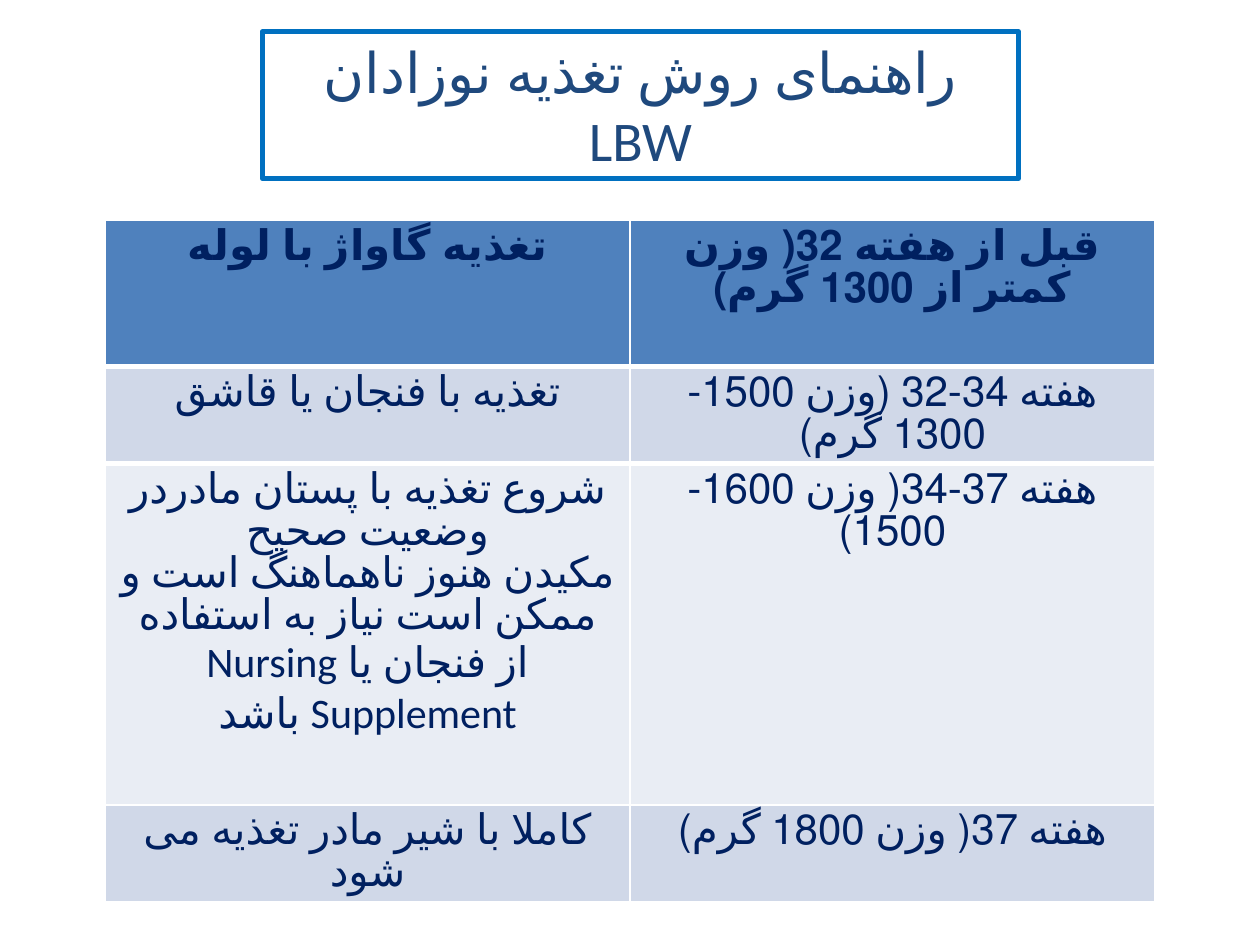
from dataclasses import dataclass

from lxml import etree
from pptx import Presentation
from pptx.dml.color import RGBColor
from pptx.enum import lang, text
from pptx.oxml import ns
from pptx.util import Cm, Pt


@dataclass(frozen=True)
class Theme:
    font: str = "Calibri"
    title_size: Pt = Pt(32)
    cell_size: Pt = Pt(24)
    title_color: str = "1F497D"
    cell_color: str = "002060"
    title_fill: str = "FFFFFF"
    title_border: str = "0070C0"
    header_fill: str = "4F81BD"
    header_rule: str = "FFFFFF"
    band_fills: tuple[str, str] = ("D0D8E8", "E9EDF4")


@dataclass(frozen=True)
class Line:
    wording: str
    rtl: bool = False


@dataclass(frozen=True)
class FeedingStage:
    height: Cm
    method: tuple[Line, ...]
    age: tuple[Line, ...]


THEME = Theme()
TITLE = Line("راهنمای روش تغذیه نوزادان LBW", rtl=True)
STAGES = (
    FeedingStage(
        Cm(2.94),
        (Line("تغذیه گاواژ با لوله"),),
        (Line("قبل از هفته 32( وزن کمتر از 1300 گرم)"),),
    ),
    FeedingStage(
        Cm(1.65),
        (Line("تغذیه با فنجان یا قاشق"),),
        (Line("هفته 34-32 (وزن 1500-1300 گرم)"),),
    ),
    FeedingStage(
        Cm(6.89),
        (
            Line("شروع تغذیه با پستان مادردر وضعیت صحیح"),
            Line(
                "مکیدن هنوز ناهماهنگ است و ممکن است نیاز به استفاده "
                "از فنجان یا Nursing Supplement باشد",
                rtl=True,
            ),
        ),
        (Line("هفته 37-34( وزن 1600-1500)"),),
    ),
    FeedingStage(
        Cm(1.65),
        (Line("کاملا با شیر مادر تغذیه می شود"),),
        (Line("هفته 37( وزن 1800 گرم)"),),
    ),
)


def write_lines(frame, lines: tuple[Line, ...], size: Pt, color: str, bold: bool = False) -> None:
    for index, line in enumerate(lines):
        paragraph = frame.add_paragraph() if index else frame.paragraphs[0]
        paragraph.alignment = text.PP_ALIGN.CENTER
        if line.rtl:
            paragraph._p.get_or_add_pPr().set("rtl", "1")
        run = paragraph.add_run()
        run.text = line.wording
        run.font.name = THEME.font
        run.font.size = size
        run.font.bold = bold
        run.font.language_id = lang.MSO_LANGUAGE_ID.FARSI
        run.font.color.rgb = RGBColor.from_string(color)


def rule_cell(cell, edge: str, width: Pt, color: str) -> None:
    """Put a solid border on one edge ("lnT" or "lnB") of a cell."""
    border = etree.Element(ns.qn(f"a:{edge}"), w=str(int(width)))
    fill = etree.SubElement(border, ns.qn("a:solidFill"))
    etree.SubElement(fill, ns.qn("a:srgbClr"), val=color)
    cell._tc.get_or_add_tcPr().insert(0, border)


def draw_title(slide) -> None:
    title = slide.shapes.title
    title.left, title.top, title.width, title.height = Cm(5.29), Cm(0.64), Cm(15.24), Cm(2.96)
    title.fill.solid()
    title.fill.fore_color.rgb = RGBColor.from_string(THEME.title_fill)
    title.line.color.rgb = RGBColor.from_string(THEME.title_border)
    title.line.width = Pt(3)
    title.text_frame.vertical_anchor = text.MSO_ANCHOR.MIDDLE
    write_lines(title.text_frame, (TITLE,), THEME.title_size, THEME.title_color)


def draw_stages(slide, stages: tuple[FeedingStage, ...]) -> None:
    """Draw one table row per stage; the first stage takes the header look."""
    height = sum(stage.height for stage in stages)
    table = slide.shapes.add_table(
        len(stages), 2, Cm(2.12), Cm(4.45), Cm(21.16), height
    ).table
    for index, (row, stage) in enumerate(zip(table.rows, stages)):
        row.height = stage.height
        is_header = index == 0
        fill = THEME.header_fill if is_header else THEME.band_fills[(index - 1) % 2]
        for cell, lines in zip(row.cells, (stage.method, stage.age)):
            cell.fill.solid()
            cell.fill.fore_color.rgb = RGBColor.from_string(fill)
            write_lines(cell.text_frame, lines, THEME.cell_size, THEME.cell_color, is_header)
            if index < 2:
                rule_cell(cell, "lnB" if is_header else "lnT", Pt(3), THEME.header_rule)


def main() -> None:
    deck = Presentation()
    deck.slide_width, deck.slide_height = Cm(25.4), Cm(19.05)
    slide = deck.slides.add_slide(deck.slide_layouts.get_by_name("Title Only"))
    draw_title(slide)
    draw_stages(slide, STAGES)
    deck.save("out.pptx")


if __name__ == "__main__":
    main()
